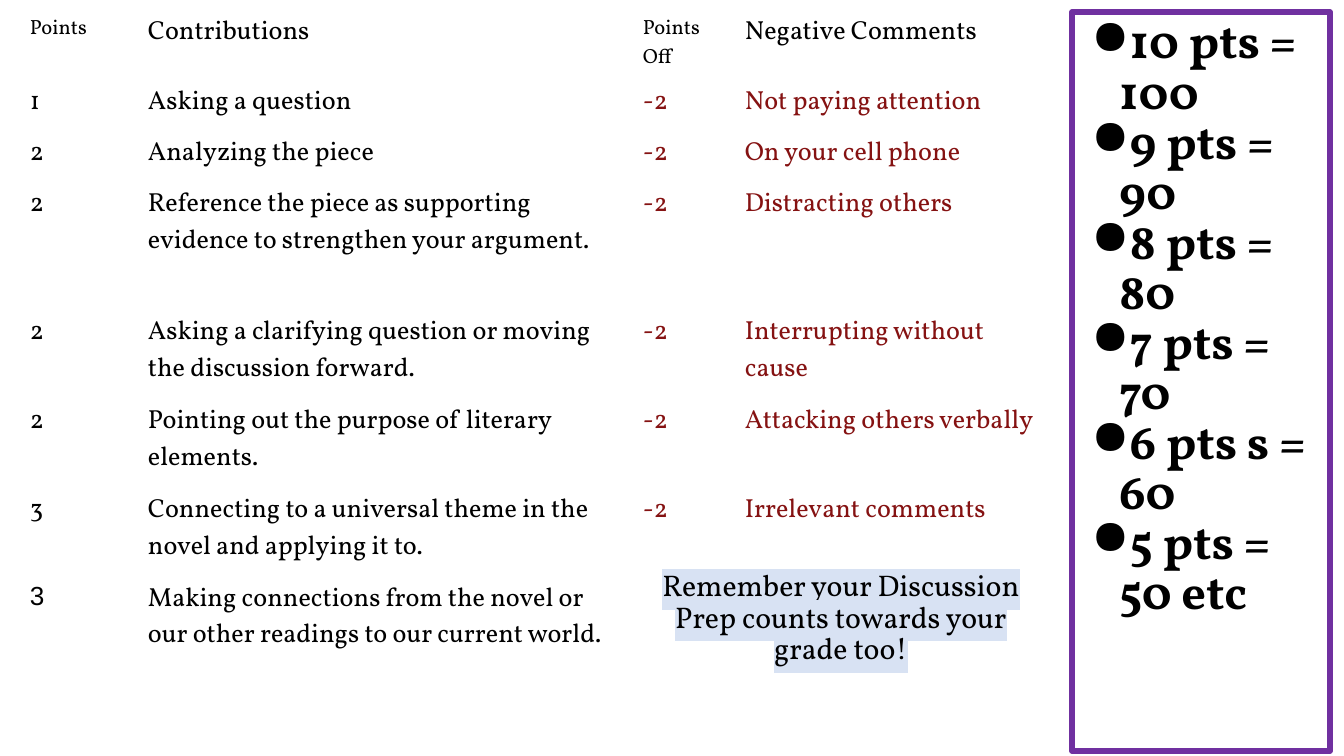
import pptx
import pptx.dml.color
import pptx.enum.shapes
import pptx.enum.text
import pptx.oxml.ns
import pptx.util
from dataclasses import dataclass
from lxml import etree

EMU_PER_PX = 914400 / 134.4


@dataclass(frozen=True)
class Theme:
    font: str = "Vollkorn"
    plain_font: str = "Arial"
    ink: str = "000000"
    negative: str = "851212"
    paper: str = "FFFFFF"
    frame: str = "7030A0"
    highlight: str = "D8E2F3"
    small: int = 11
    body: int = 14
    reminder: int = 16
    scale: int = 26


THEME = Theme()

HEADERS = ["Points", "Contributions", "Points Off", "Negative Comments"]
CONTRIBUTIONS = [
    ("1", "Asking a question"),
    ("2", "Analyzing the piece"),
    ("2", "Reference the piece as supporting evidence to strengthen your argument."),
    ("2", "Asking a clarifying question or moving the discussion forward."),
    ("2", "Pointing out the purpose of literary elements."),
    ("3", "Connecting to a universal theme in the novel and applying it to."),
    ("3", "Making connections from the novel or our other readings to our current world."),
]
NEGATIVE_COMMENTS = [
    "Not paying attention", "On your cell phone", "Distracting others",
    "Interrupting without cause", "Attacking others verbally", "Irrelevant comments",
]
GRADES = ["10 pts = 100", "9 pts = 90", "8 pts = 80",
          "7 pts = 70", "6 pts s = 60", "5 pts = 50 etc"]
COLUMN_WIDTHS = [118, 495, 102, 333]
ROW_HEIGHTS = [55, 51, 51, 128, 89, 89, 89, 128]


def px(length):
    return pptx.util.Emu(round(length * EMU_PER_PX))


def rgb(value):
    return pptx.dml.color.RGBColor.from_string(value)


def add_run(paragraph, text, size, color=THEME.ink, font=THEME.font, bold=False):
    run = paragraph.add_run()
    run.text = text
    run.font.size = pptx.util.Pt(size)
    run.font.name = font
    run.font.bold = bold
    run.font.color.rgb = rgb(color)
    return run


def set_margins(frame, horizontal, vertical):
    frame.margin_left = frame.margin_right = px(horizontal)
    frame.margin_top = frame.margin_bottom = px(vertical)


def add_bullet(paragraph):
    properties = paragraph._p.get_or_add_pPr()
    properties.set("marL", str(px(34)))
    properties.set("indent", str(px(-28)))
    color = etree.SubElement(properties, pptx.oxml.ns.qn("a:buClr"))
    etree.SubElement(color, pptx.oxml.ns.qn("a:srgbClr"), val=THEME.ink)
    etree.SubElement(properties, pptx.oxml.ns.qn("a:buChar"), char="●")


def highlight_run(run, color):
    highlight = etree.Element(pptx.oxml.ns.qn("a:highlight"))
    etree.SubElement(highlight, pptx.oxml.ns.qn("a:srgbClr"), val=color)
    run._r.rPr.find(pptx.oxml.ns.qn("a:solidFill")).addnext(highlight)


def add_grade_scale(slide):
    shape = slide.shapes.add_shape(
        pptx.enum.shapes.MSO_SHAPE.RECTANGLE, px(1072), px(12), px(258), px(739))
    shape.shadow.inherit = False
    shape.fill.solid()
    shape.fill.fore_color.rgb = rgb(THEME.paper)
    shape.line.color.rgb = rgb(THEME.frame)
    shape.line.width = pptx.util.Pt(3)
    frame = shape.text_frame
    frame.word_wrap = True
    frame.vertical_anchor = pptx.enum.text.MSO_ANCHOR.TOP
    set_margins(frame, 13, 7)
    for index, grade in enumerate(GRADES):
        paragraph = frame.add_paragraph() if index else frame.paragraphs[0]
        paragraph.alignment = pptx.enum.text.PP_ALIGN.LEFT
        paragraph.line_spacing = 0.86
        add_bullet(paragraph)
        add_run(paragraph, grade, THEME.scale, bold=True)
    paragraph.space_after = pptx.util.Pt(16)


def fill_cell(cell, text, size, color=THEME.ink, font=THEME.font):
    add_run(cell.text_frame.paragraphs[0], text, size, color, font)


def add_points_table(slide):
    table = slide.shapes.add_table(
        len(ROW_HEIGHTS), len(COLUMN_WIDTHS), px(17), px(9),
        px(sum(COLUMN_WIDTHS)), px(sum(ROW_HEIGHTS))).table
    table.first_row = table.horz_banding = False
    for column, width in zip(table.columns, COLUMN_WIDTHS):
        column.width = px(width)
    for row, height in zip(table.rows, ROW_HEIGHTS):
        row.height = px(height)
    for cell in table.iter_cells():
        cell.fill.background()
        set_margins(cell, 13, 6)

    # Header row
    for column, header in enumerate(HEADERS):
        size = THEME.small if header.startswith("Points") else THEME.body
        fill_cell(table.cell(0, column), header, size)

    # Points earned
    for row, (points, contribution) in enumerate(CONTRIBUTIONS, start=1):
        font = THEME.plain_font if row == len(CONTRIBUTIONS) else THEME.font
        fill_cell(table.cell(row, 0), points, THEME.body, font=font)
        fill_cell(table.cell(row, 1), contribution, THEME.body)

    # Points lost
    for row, comment in enumerate(NEGATIVE_COMMENTS, start=1):
        fill_cell(table.cell(row, 2), "-2", THEME.body, THEME.negative)
        fill_cell(table.cell(row, 3), comment, THEME.body, THEME.negative)


def add_reminder(slide):
    frame = slide.shapes.add_textbox(px(630), px(559), px(422), px(172)).text_frame
    frame.word_wrap = True
    set_margins(frame, 13, 13)
    paragraph = frame.paragraphs[0]
    paragraph.alignment = pptx.enum.text.PP_ALIGN.CENTER
    paragraph.line_spacing = 0.87
    run = add_run(paragraph, "Remember your Discussion Prep counts towards your grade too!",
                  THEME.reminder)
    highlight_run(run, THEME.highlight)


def main():
    presentation = pptx.Presentation()
    presentation.slide_width = px(1344)
    presentation.slide_height = px(756)
    slide = presentation.slides.add_slide(presentation.slide_layouts[6])
    add_grade_scale(slide)
    add_points_table(slide)
    add_reminder(slide)
    presentation.save("out.pptx")


if __name__ == "__main__":
    main()
